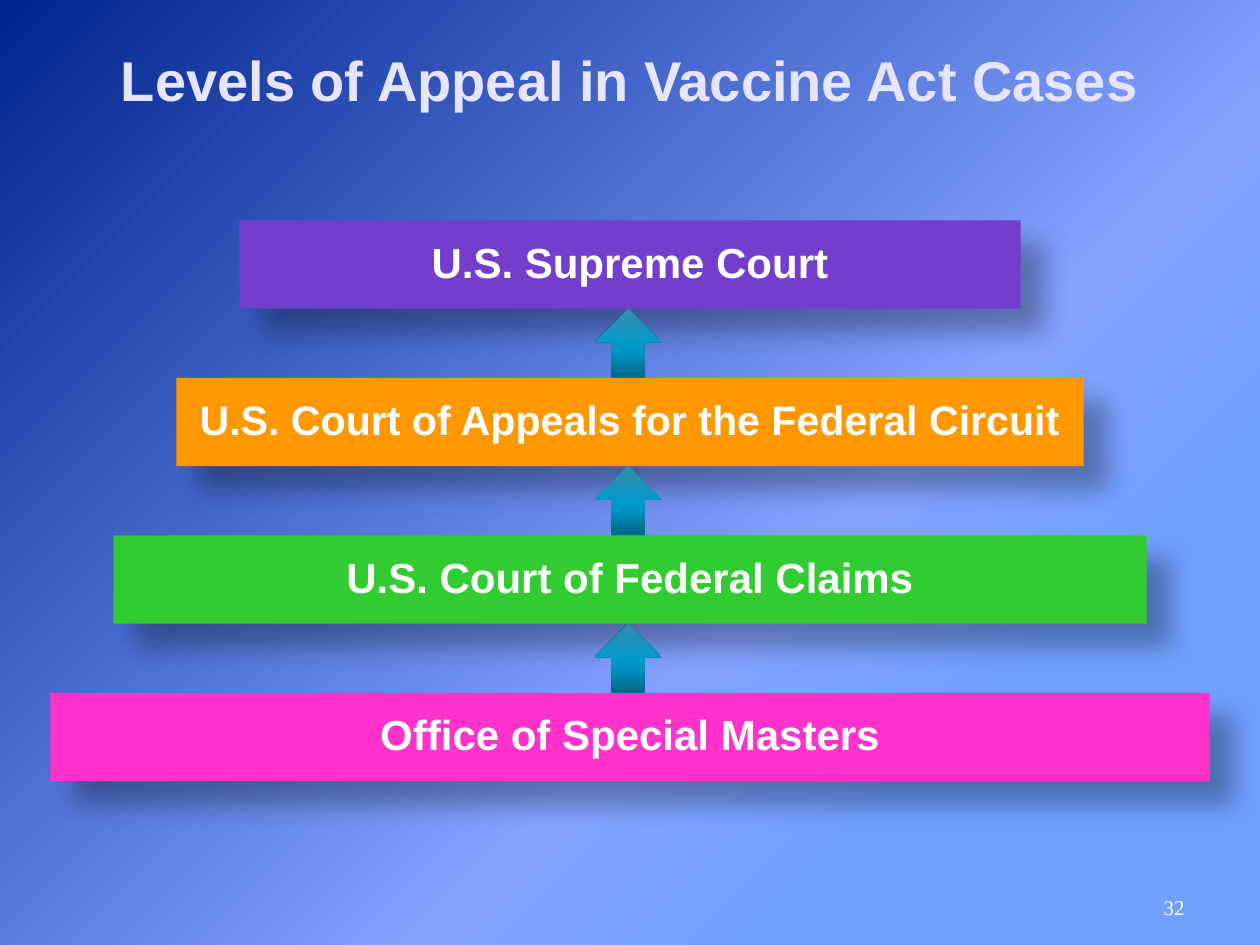
from lxml import etree
from pptx import Presentation
from pptx import util as u
from pptx.dml.color import RGBColor
from pptx.enum import shapes, text
from pptx.oxml import ns

PX = 9144  # EMU per px, at 100 px to the inch
LEVELS = [  # from the highest court down
    ("U.S. Supreme Court", "743ECD", 24),
    ("U.S. Court of Appeals for the Federal Circuit", "FF9700", 23.5),
    ("U.S. Court of Federal Claims", "32CB32", 24),
    ("Office of Special Masters", "FF32CB", 24),
]
TOP, STEP, TALL = 175, 125, 70
BACK = [(0, "00248E"), (62, "84A3FF"), (77, "70A0FF")]
TEAL = [(0, "006789"), (48, "00A0D5"), (100, "47D1FF")]


def px(*vals):
    return [u.Emu(v * PX) for v in vals]


def color(code):
    return RGBColor.from_string(code)


def node(up, tag, **attrs):
    return etree.SubElement(up, ns.qn("a:" + tag),
                            {k: str(v) for k, v in attrs.items()})


def blend(props, stops):
    """Empty the gradient fill in props, give it new stops and return it."""
    grad = props.find(ns.qn("a:gradFill"))
    for child in list(grad):
        grad.remove(child)
    row = node(grad, "gsLst")
    for pos, code in stops:
        node(node(row, "gs", pos=pos * 1000), "srgbClr", val=code)
    return grad


def write(shape, words, size, font, code, bold, align, anchor):
    frame = shape.text_frame
    frame.word_wrap = True
    frame.vertical_anchor = anchor
    para = frame.paragraphs[0]
    para.text = words
    para.alignment = align
    para.font.size = u.Pt(size)
    para.font.name = font
    para.font.bold = bold
    para.font.color.rgb = color(code)
    return frame


def add_back(slide):
    slide.background.fill.gradient()
    props = slide.background._cSld.find(".//" + ns.qn("p:bgPr"))
    way = node(blend(props, BACK), "path", path="circle")
    node(way, "fillToRect", r=100000, b=100000)


def add_title(slide, words):
    title = slide.shapes.title
    title.left, title.top, title.width, title.height = px(0, 0, 1000, 125)
    write(title, words, 32, "Arial", "E5E5FF", True,
          text.PP_ALIGN.CENTER, text.MSO_ANCHOR.MIDDLE)


def add_shape(slide, kind, *box):
    shape = slide.shapes.add_shape(kind, *px(*box))
    shape.line.fill.background()
    shape.shadow.inherit = False
    return shape


def add_arrow(slide, top):
    arrow = add_shape(slide, shapes.MSO_SHAPE.UP_ARROW, 472, top, 53, 55)
    arrow.fill.gradient()
    node(blend(arrow._element.spPr, TEAL), "lin", ang=270 * 60000, scaled=0)


def add_level(slide, rank, words, fill, size):
    wide = 620 + 100 * rank
    bar = add_shape(slide, shapes.MSO_SHAPE.RECTANGLE,
                    (1000 - wide) // 2, TOP + STEP * rank, wide, TALL)
    bar.fill.solid()
    bar.fill.fore_color.rgb = color(fill)
    frame = write(bar, words, size, "Arial", "FFFFFF", True,
                  text.PP_ALIGN.CENTER, text.MSO_ANCHOR.MIDDLE)
    frame.paragraphs[0].line_spacing = 0.9
    for side in ("left", "top", "right", "bottom"):
        setattr(frame, "margin_" + side, u.Emu(5 * PX))
    # Soft shadow to the lower right
    drop = node(bar._element.spPr.find(ns.qn("a:effectLst")), "outerShdw",
                blurRad=u.Pt(15), dist=u.Pt(18), dir=45 * 60000,
                algn="tl", rotWithShape=0)
    node(node(drop, "srgbClr", val="000000"), "alpha", val=30000)


def add_number(slide, words):
    box = slide.shapes.add_textbox(*px(717, 683, 233, 52))
    write(box, words, 12, "Times New Roman", "FFFFFF", False,
          text.PP_ALIGN.RIGHT, text.MSO_ANCHOR.BOTTOM)


def main():
    deck = Presentation()
    deck.slide_width, deck.slide_height = px(1000, 750)
    slide = deck.slides.add_slide(deck.slide_layouts[5])
    add_back(slide)
    add_title(slide, "Levels of Appeal in Vaccine Act Cases")
    add_number(slide, "32")
    # Arrows lie behind the bars and their shadows
    for rank in range(len(LEVELS) - 1):
        add_arrow(slide, TOP + TALL + STEP * rank)
    for rank, level in reversed(list(enumerate(LEVELS))):
        add_level(slide, rank, *level)
    deck.save("out.pptx")


if __name__ == "__main__":
    main()
